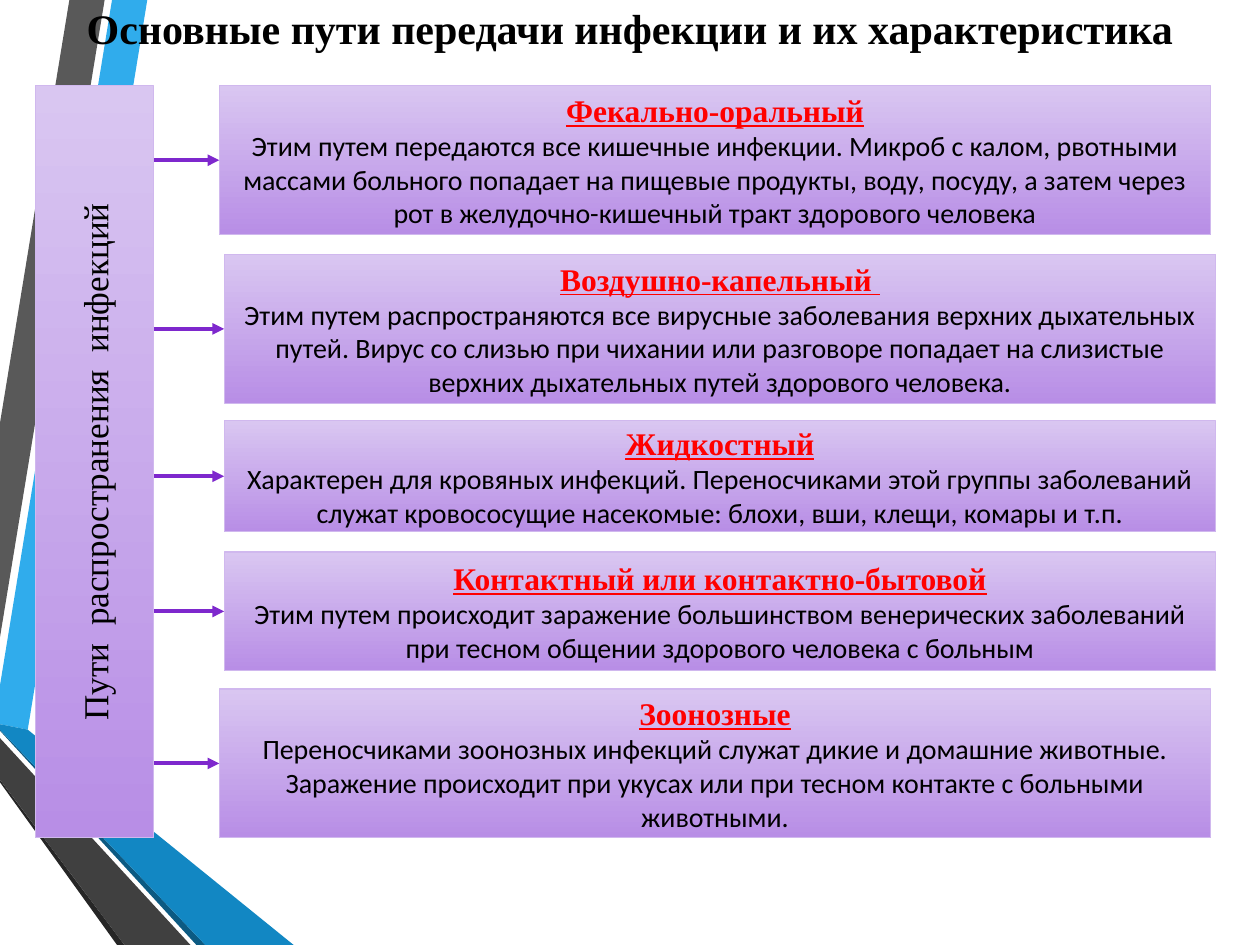
import dataclasses

import pptx
import pptx.dml.color
import pptx.enum.dml
import pptx.enum.shapes
import pptx.enum.text
import pptx.util
import lxml.etree

Cm = pptx.util.Cm
Pt = pptx.util.Pt


@dataclasses.dataclass(frozen=True)
class Theme:
    top: str = "D9C6F1"
    base: str = "B88EE6"
    edge: str = "D0B8EE"
    arrow: str = "7E28CD"
    ink: str = "000000"
    red: str = "FF0000"
    serif: str = "Times New Roman"
    sans: str = "Calibri"
    title: int = 24
    side: int = 20
    head: int = 18
    body: int = 16


THEME = Theme()

# Colour, then corners in cm
RIBBONS = [
    ("30ACEC", [(0, 13.82), (0, 14.6), (0.56, 14.71), (2.97, 0), (2.26, 0)]),
    ("595959", [(2.11, 0), (1.4, 0), (0, 8.53), (0, 12.85)]),
    ("262626", [(0, 15.72), (0, 15.77), (2.36, 19.05), (2.51, 19.05)]),
    ("0C5A82", [(0, 14.71), (0, 14.73), (3.96, 19.05), (4.14, 19.05)]),
    ("1287C3", [(0, 14.71), (4.14, 19.05), (5.92, 19.05), (0.56, 14.71), (0, 14.6)]),
    ("404040", [(0, 15.72), (2.51, 19.05), (3.84, 19.05), (0, 14.88)]),
]

# Left, top and height in cm, then heading and text
ROUTES = [
    (4.42, 1.73, 3, "Фекально-оральный",
     "Этим путем передаются все кишечные инфекции. Микроб с калом, рвотными "
     "массами больного попадает на пищевые продукты, воду, посуду, а затем через "
     "рот в желудочно-кишечный тракт здорового человека"),
    (4.52, 5.13, 3, "Воздушно-капельный ",
     "Этим путем распространяются все вирусные заболевания верхних дыхательных "
     "путей. Вирус со слизью при чихании или разговоре попадает на слизистые "
     "верхних дыхательных путей здорового человека."),
    (4.52, 8.48, 2.24, "Жидкостный",
     "Характерен для кровяных инфекций. Переносчиками этой группы заболеваний "
     "служат кровососущие насекомые: блохи, вши, клещи, комары и т.п."),
    (4.52, 11.13, 2.39, "Контактный или контактно-бытовой",
     "Этим путем происходит заражение большинством венерических заболеваний "
     "при тесном общении здорового человека с больным"),
    (4.42, 13.89, 3, "Зоонозные",
     "Переносчиками зоонозных инфекций служат дикие и домашние животные. "
     "Заражение происходит при укусах или при тесном контакте с больными "
     "животными."),
]
BAR = (0.71, 1.73, 2.39, 15.16)
WIDE = 19.99


def rgb(code):
    return pptx.dml.color.RGBColor.from_string(code)


def write(para, text, size, face, ink=THEME.ink, bold=False, line=False):
    para.alignment = pptx.enum.text.PP_ALIGN.CENTER
    run = para.add_run()
    run.text = text
    font = run.font
    font.size, font.name = Pt(size), face
    font.bold, font.underline = bold, line
    font.color.rgb = rgb(ink)


def ribbon(slide, ink, dots):
    first, *rest = [(Cm(x), Cm(y)) for x, y in dots]
    build = slide.shapes.build_freeform(*first)
    build.add_line_segments(rest, close=True)
    shape = build.convert_to_shape()
    shape.shadow.inherit = False
    shape.fill.solid()
    shape.fill.fore_color.rgb = rgb(ink)
    shape.line.fill.background()


def panel(slide, *area):
    """Add a lilac box shaded from top to base and return its text frame."""
    kind = pptx.enum.shapes.MSO_SHAPE.RECTANGLE
    shape = slide.shapes.add_shape(kind, *map(Cm, area))
    shape.shadow.inherit = False
    shape.fill.gradient()
    shape.fill.gradient_angle = 270
    for stop, ink, spot in zip(shape.fill.gradient_stops, (THEME.top, THEME.base), (0, 1)):
        stop.color.rgb = rgb(ink)
        stop.position = spot
    shape.line.color.rgb = rgb(THEME.edge)
    shape.line.width = Pt(0.75)
    frame = shape.text_frame
    frame.word_wrap = True
    frame.vertical_anchor = pptx.enum.text.MSO_ANCHOR.MIDDLE
    return frame


def route(slide, left, top, high, head, body):
    frame = panel(slide, left, top, WIDE, high)
    write(frame.paragraphs[0], head, THEME.head, THEME.serif, THEME.red, True, True)
    write(frame.add_paragraph(), body, THEME.body, THEME.sans)


def arrow(slide, start, end, y):
    kind = pptx.enum.shapes.MSO_CONNECTOR.STRAIGHT
    link = slide.shapes.add_connector(kind, Cm(start), Cm(y), Cm(end), Cm(y))
    link.line.color.rgb = rgb(THEME.arrow)
    link.line.width = Pt(2.25)
    qn = pptx.oxml.ns.qn
    lxml.etree.SubElement(link.line._get_or_add_ln(), qn("a:tailEnd"), type="triangle")
    lxml.etree.SubElement(link.element.spPr, qn("a:effectLst"))


def sidebar(slide):
    frame = panel(slide, *BAR)
    frame._txBody.bodyPr.set("vert", "vert270")
    write(frame.paragraphs[0], "Пути  распространения  инфекций", THEME.side, THEME.serif)


def title(slide):
    frame = slide.shapes.add_textbox(0, 0, Cm(25.4), Cm(1.12)).text_frame
    frame.word_wrap = True
    frame.vertical_anchor = pptx.enum.text.MSO_ANCHOR.MIDDLE
    write(frame.paragraphs[0], "Основные пути передачи инфекции и их характеристика",
          THEME.title, THEME.serif, bold=True)


def main():
    deck = pptx.Presentation()
    deck.slide_width, deck.slide_height = Cm(25.4), Cm(19.05)
    slide = deck.slides.add_slide(deck.slide_layouts[6])
    for ink, dots in RIBBONS:
        ribbon(slide, ink, dots)
    sidebar(slide)
    for item in ROUTES:
        route(slide, *item)
    for left, top, high, *_ in ROUTES:
        arrow(slide, BAR[0] + BAR[2], left, top + high / 2)
    title(slide)
    deck.save("out.pptx")


if __name__ == "__main__":
    main()
